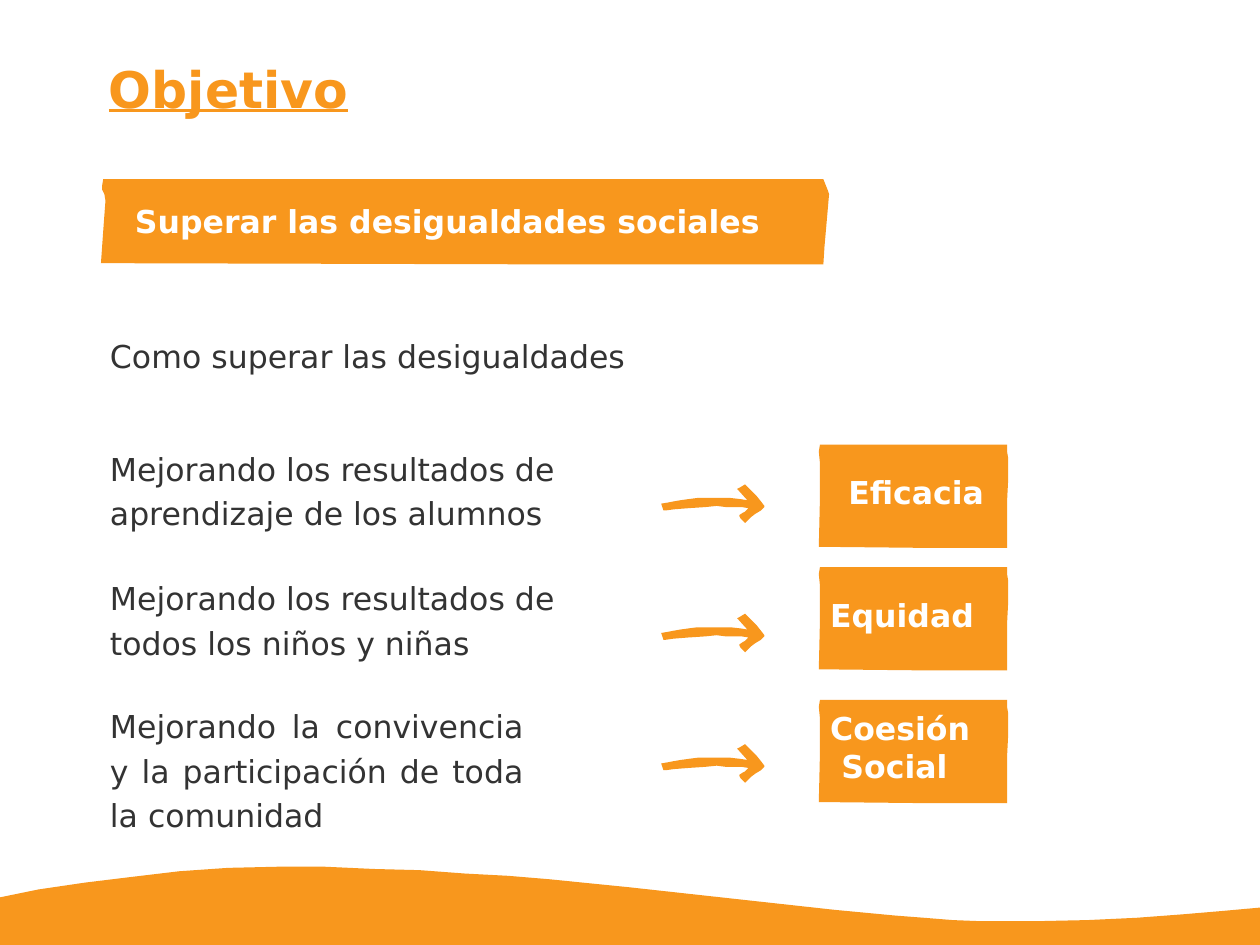
from dataclasses import dataclass, field
from typing import Any

from pptx import Presentation
from pptx.dml.color import RGBColor
from pptx.enum.text import MSO_ANCHOR, PP_ALIGN
from pptx.slide import Slide
from pptx.util import Inches, Pt

ORANGE = RGBColor(0xF8, 0x97, 0x1D)
CHARCOAL = RGBColor(0x33, 0x33, 0x33)
WHITE = RGBColor(0xFF, 0xFF, 0xFF)

# The slide is a fine grid of square cells; every length counts columns or rows.
COLUMNS, ROWS = 1111, 833
CELL = Inches(0.01)
MARGIN = 96
ARROW_COLUMN = 583
TILE_COLUMN = 722

Outline = list[tuple[float, float]]

WAVE: Outline = [
    (0, 791), (34, 784), (75, 778), (116, 773), (158, 768), (201, 765),
    (244, 764), (287, 764), (330, 766), (370, 767), (410, 770), (448, 772),
    (484, 775), (554, 782), (736, 802), (789, 807), (815, 809), (840, 811),
    (865, 812), (913, 812), (959, 811), (1002, 809), (1042, 806),
    (1078, 803), (COLUMNS, 800), (COLUMNS, ROWS), (0, ROWS),
]
BANNER: Outline = [
    (2, 0), (1, 6), (1, 9), (3, 13), (4, 19), (3, 32), (2, 46), (0, 74),
    (382, 75), (637, 75), (638, 59), (641, 25), (642, 13), (641, 10),
    (639, 5), (637, 0),
]
TILE: Outline = [
    (1, 0), (0.5, 6), (1, 16), (1, 48), (0, 90), (99, 91), (166, 91),
    (166, 50), (167, 30), (167, 12), (166, 6), (166, 0), (97, 0.5),
]
ARROW: Outline = [
    (0, 17), (6, 16), (11, 15), (17, 14), (24, 13), (32, 12.5), (40, 12),
    (47, 12), (61, 12), (70, 13), (76, 13.5), (67, 4), (69, 3), (74, 0),
    (78, 4), (84, 10), (88, 15), (91, 19), (91, 20), (88, 23), (83, 26),
    (79, 29), (74, 33.5), (70, 30), (69, 28), (69, 27), (72, 25), (74, 24),
    (77, 21), (71, 20.5), (64, 20), (57, 19.5), (49, 19), (39, 19.5),
    (24, 21), (11, 22), (4, 23), (2, 23),
]

BODY_FONT = {"name": "DejaVu Sans", "size": Pt(20)}
LABEL_FONT = BODY_FONT | {"bold": True}
TITLE_FONT = LABEL_FONT | {"size": Pt(32), "underline": True}
WRAPPED = {"line_spacing": 1.17}
JUSTIFIED = WRAPPED | {"alignment": PP_ALIGN.JUSTIFY}


@dataclass(frozen=True)
class TextBlock:
    text: str
    column: float
    row: float
    columns: float
    rows: float
    color: RGBColor = CHARCOAL
    font: dict[str, Any] = field(default_factory=lambda: BODY_FONT)
    paragraph: dict[str, Any] = field(default_factory=dict)
    left_margin: float = 1
    first_indent: float = 0


@dataclass(frozen=True)
class Goal:
    """One way of overcoming inequality and the tile it leads to."""
    action: TextBlock
    arrow_row: float
    tile_row: float
    label: TextBlock


HEADINGS = [
    TextBlock("Objetivo", MARGIN, 43, 920, 88, ORANGE, TITLE_FONT,
              {"line_spacing": Pt(44.1)}, left_margin=0),
    TextBlock("Superar las desigualdades sociales", 118, 178, 596, 38,
              WHITE, LABEL_FONT),
    TextBlock("Como superar las desigualdades", MARGIN, 297, 501, 45),
]
GOALS = [
    Goal(TextBlock("Mejorando los resultados de aprendizaje de los alumnos",
                   MARGIN, 391, 404, 78, paragraph=WRAPPED),
         427, 392,
         TextBlock("Eficacia", 747, 417, 130, 34, WHITE, LABEL_FONT)),
    Goal(TextBlock("Mejorando los resultados de todos los niños y niñas",
                   MARGIN, 505, 404, 78, paragraph=WRAPPED),
         541, 500,
         TextBlock("Equidad", 731, 525, 146, 34, WHITE, LABEL_FONT)),
    Goal(TextBlock("Mejorando la convivencia y la participación de toda la comunidad",
                   MARGIN, 618, 366, 117, paragraph=JUSTIFIED),
         656, 617,
         TextBlock("Coesión Social", 731, 625, 158, 67, WHITE, LABEL_FONT,
                   left_margin=11, first_indent=-10)),
]


def cells(count: float) -> int:
    return round(count * CELL)


def apply_format(target: Any, values: dict[str, Any]) -> None:
    for name, value in values.items():
        setattr(target, name, value)


def draw_outline(slide: Slide, outline: Outline, column: float, row: float) -> None:
    builder = slide.shapes.build_freeform(*outline[0], scale=float(CELL))
    builder.add_line_segments(outline[1:], close=True)
    shape = builder.convert_to_shape(cells(column), cells(row))
    shape.shadow.inherit = False
    shape.fill.solid()
    shape.fill.fore_color.rgb = ORANGE
    shape.line.fill.background()


def draw_text(slide: Slide, block: TextBlock) -> None:
    lengths = (block.column, block.row, block.columns, block.rows)
    frame = slide.shapes.add_textbox(*map(cells, lengths)).text_frame
    apply_format(frame, {
        "word_wrap": True, "vertical_anchor": MSO_ANCHOR.TOP,
        "margin_left": 0, "margin_right": 0, "margin_top": 0, "margin_bottom": 0,
    })
    paragraph = frame.paragraphs[0]
    apply_format(paragraph, block.paragraph)
    properties = paragraph._p.get_or_add_pPr()
    properties.set("marL", str(cells(block.left_margin)))
    properties.set("indent", str(cells(block.first_indent)))
    run = paragraph.add_run()
    run.text = block.text
    apply_format(run.font, block.font)
    run.font.color.rgb = block.color


def main() -> None:
    presentation = Presentation()
    presentation.slide_width = cells(COLUMNS)
    presentation.slide_height = cells(ROWS)
    slide = presentation.slides.add_slide(presentation.slide_layouts[6])

    draw_outline(slide, WAVE, 0, 0)
    draw_outline(slide, BANNER, 89, 158)
    for heading in HEADINGS:
        draw_text(slide, heading)
    for goal in GOALS:
        draw_text(slide, goal.action)
        draw_outline(slide, ARROW, ARROW_COLUMN, goal.arrow_row)
        draw_outline(slide, TILE, TILE_COLUMN, goal.tile_row)
        draw_text(slide, goal.label)

    presentation.save("out.pptx")


if __name__ == "__main__":
    main()
